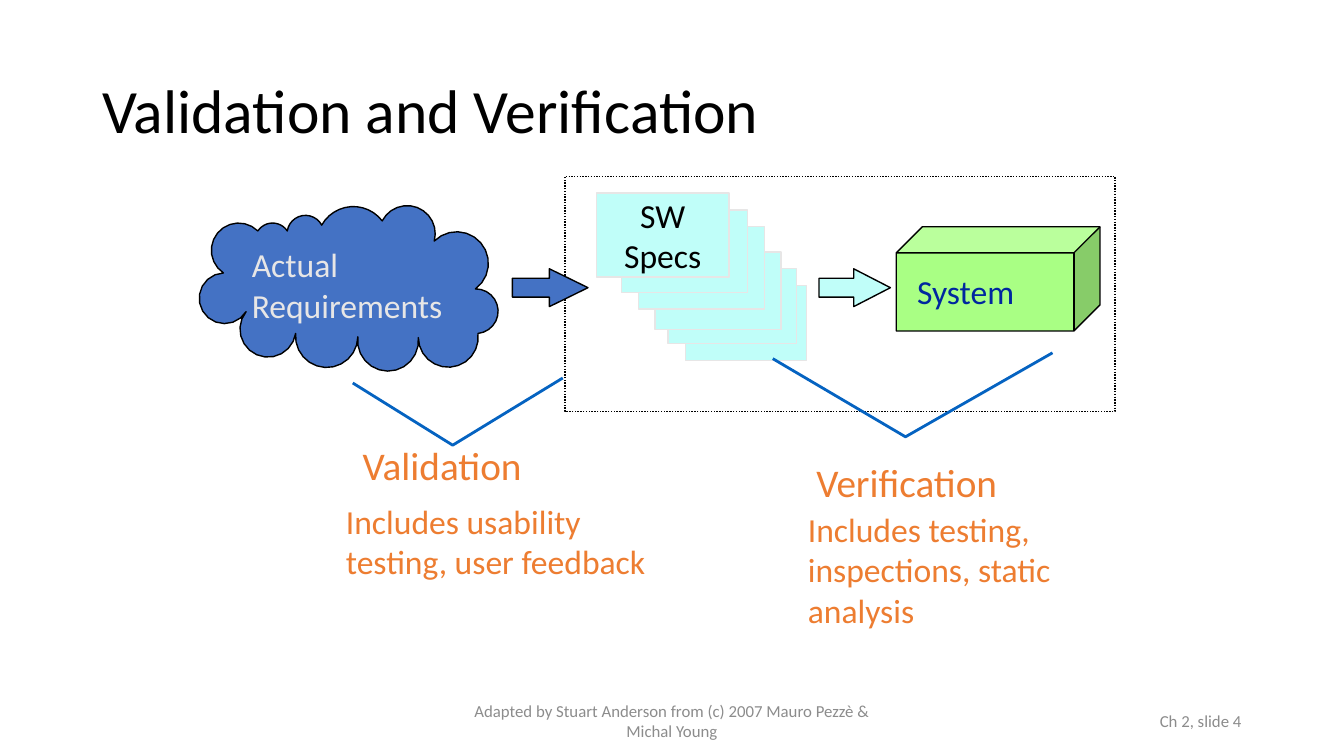
import math
from dataclasses import dataclass
from typing import Optional

import pptx
import pptx.dml.color
import pptx.enum.dml
import pptx.enum.shapes
import pptx.enum.text
import pptx.util

RGB = pptx.dml.color.RGBColor
PRESET = pptx.enum.shapes.MSO_SHAPE
ALIGN = pptx.enum.text.PP_ALIGN
ANCHOR = pptx.enum.text.MSO_ANCHOR

BLACK = RGB(0x00, 0x00, 0x00)
GREY = RGB(0x8C, 0x8C, 0x8C)
PALE = RGB(0xE7, 0xE6, 0xE6)
BLUE = RGB(0x44, 0x72, 0xC4)
NAVY = RGB(0x00, 0x27, 0x9F)
BRACKET_BLUE = RGB(0x05, 0x63, 0xC1)
CYAN = RGB(0xC0, 0xFE, 0xF9)
GREEN = RGB(0xA9, 0xFF, 0x84)
ORANGE = RGB(0xED, 0x7D, 0x31)

FONT = "Calibri"
COLUMNS, ROWS = 160, 90
SLIDE_WIDTH = pptx.util.Emu(12192000)
UNIT = SLIDE_WIDTH // COLUMNS  # columns and rows are equally large
LOBE_STEPS = 12


@dataclass(frozen=True)
class Cell:
    """An area of the grid, in columns and rows."""
    column: float
    row: float
    columns: float
    rows: float

    def emu(self) -> list[int]:
        return [grid(n) for n in (self.column, self.row, self.columns, self.rows)]


@dataclass(frozen=True)
class Label:
    cell: Cell
    lines: tuple[str, ...]
    size: float
    color: RGB
    align: ALIGN = ALIGN.LEFT
    anchor: ANCHOR = ANCHOR.TOP
    wrap: bool = False
    spacing: float = 1.0


@dataclass(frozen=True)
class Block:
    cell: Cell
    preset: PRESET
    fill: Optional[RGB]
    line: RGB = BLACK
    adjustments: tuple[float, ...] = ()
    dotted: bool = False


@dataclass(frozen=True)
class Lobe:
    """An arc of the cloud: where it starts, and its height as a share of its chord."""
    column: float
    row: float
    bulge: float


@dataclass(frozen=True)
class Outline:
    points: list[tuple[float, float]]
    line: RGB
    weight: float
    fill: Optional[RGB] = None


CLOUD_LOBES = (
    Lobe(30.7, 27.5, 0.55), Lobe(26.6, 32.5, 0.83), Lobe(29.3, 37.1, 0.65),
    Lobe(35.2, 39.7, 0.52), Lobe(42.6, 40.1, 0.56), Lobe(49.8, 40.2, 0.53),
    Lobe(56.9, 39.7, 0.48), Lobe(56.6, 34.4, 0.54), Lobe(51.7, 28.7, 0.45),
    Lobe(45.5, 26.3, 0.27), Lobe(38.3, 26.8, 0.36), Lobe(34.2, 27.5, 0.27),
)

HEADING = Label(Cell(11, 4.8, 138, 17.4), ("Validation and Verification",), 44, BLACK,
                anchor=ANCHOR.MIDDLE, wrap=True, spacing=0.9)
CREDIT = Label(Cell(53, 83.4, 54, 4.8),
               ("Adapted by Stuart Anderson from (c) 2007 Mauro Pezzè & Michal Young",),
               12, GREY, ALIGN.CENTER, ANCHOR.MIDDLE, wrap=True)
SLIDE_NUMBER = Label(Cell(113, 83.4, 36, 4.8), ("Ch 2, slide 4",), 12, GREY,
                     ALIGN.RIGHT, ANCHOR.MIDDLE, wrap=True)

VERIFIED_FRAME = Block(Cell(67.25, 21, 65.5, 28), PRESET.RECTANGLE, None, dotted=True)
REQUIREMENTS = Label(Cell(28.8, 28.5, 27.6, 10.9), ("Actual", "Requirements"), 24, PALE)
TO_SPECS = Block(Cell(61, 32, 9, 4.5), PRESET.RIGHT_ARROW, BLUE, adjustments=(0.5, 1.02))
TO_SYSTEM = Block(Cell(97.5, 32, 8.5, 4.5), PRESET.RIGHT_ARROW, CYAN,
                  adjustments=(0.5, 0.97))
SYSTEM_CUBE = Block(Cell(106.7, 27, 24.25, 12.4), PRESET.CUBE, GREEN,
                    adjustments=(0.25,))
FRONT_SPEC = Cell(71, 23, 15.8, 10)
SPEC_SHEETS = (
    Cell(81.6, 34, 14.4, 8.9), Cell(79.5, 32, 15.3, 8.9), Cell(78, 30, 15, 9.2),
    Cell(76, 27, 15, 9.8), Cell(74, 25, 15, 9.8), FRONT_SPEC,
)
SPECS = Label(FRONT_SPEC, ("SW", "Specs"), 24, BLACK, ALIGN.CENTER, ANCHOR.MIDDLE)
SYSTEM = Label(Cell(108, 31.7, 15.8, 6), ("System",), 24, NAVY)

VALIDATION_BRACKET = Outline([(42, 45.6), (53.9, 53), (67, 45)], BRACKET_BLUE, 2)
VERIFICATION_BRACKET = Outline([(92, 42.7), (107.8, 52), (125.3, 42)], BRACKET_BLUE, 2)
ACTIVITIES = (
    Label(Cell(42, 52, 22.9, 6.7), ("Validation",), 28, ORANGE),
    Label(Cell(96, 54, 25.4, 6.7), ("Verification",), 28, ORANGE),
    Label(Cell(40, 59, 39.6, 15.7), ("Includes usability testing, user feedback",),
          24, ORANGE, wrap=True),
    Label(Cell(95, 60, 39.6, 15.7), ("Includes testing, inspections, static analysis",),
          24, ORANGE, wrap=True),
)


def grid(units: float) -> int:
    return round(units * UNIT)


def lobe_points(lobe: Lobe, following: Lobe) -> list[tuple[float, float]]:
    """Points on the arc that swells outwards between the starts of two lobes."""
    dx, dy = following.column - lobe.column, following.row - lobe.row
    half_angle = 2 * math.atan(2 * lobe.bulge)
    radius = 0.5 / math.sin(half_angle)  # as a share of the chord
    points = []
    for step in range(LOBE_STEPS):
        angle = half_angle * (2 * step / LOBE_STEPS - 1)
        along = 0.5 + radius * math.sin(angle)
        out = radius * (math.cos(angle) - math.cos(half_angle))
        points.append((lobe.column + along * dx - out * dy,
                       lobe.row + along * dy + out * dx))
    return points


def requirements_cloud() -> Outline:
    following = CLOUD_LOBES[1:] + CLOUD_LOBES[:1]
    points = [point for pair in zip(CLOUD_LOBES, following) for point in lobe_points(*pair)]
    return Outline(points, BLACK, 1, BLUE)


def style(shape, fill: Optional[RGB], line: RGB, weight: float) -> None:
    shape.shadow.inherit = False
    if fill is None:
        shape.fill.background()
    else:
        shape.fill.solid()
        shape.fill.fore_color.rgb = fill
    shape.line.color.rgb = line
    shape.line.width = pptx.util.Pt(weight)


def draw_label(slide, label: Label) -> None:
    frame = slide.shapes.add_textbox(*label.cell.emu()).text_frame
    frame.word_wrap = label.wrap
    frame.vertical_anchor = label.anchor
    for index, line in enumerate(label.lines):
        paragraph = frame.add_paragraph() if index else frame.paragraphs[0]
        paragraph.alignment = label.align
        paragraph.line_spacing = label.spacing
        run = paragraph.add_run()
        run.text = line
        run.font.name = FONT
        run.font.size = pptx.util.Pt(label.size)
        run.font.color.rgb = label.color


def draw_block(slide, block: Block) -> None:
    shape = slide.shapes.add_shape(block.preset, *block.cell.emu())
    style(shape, block.fill, block.line, 1)
    for index, value in enumerate(block.adjustments):
        shape.adjustments[index] = value
    if block.dotted:
        shape.line.dash_style = pptx.enum.dml.MSO_LINE.ROUND_DOT


def draw_outline(slide, outline: Outline) -> None:
    start, *rest = [(grid(x), grid(y)) for x, y in outline.points]
    builder = slide.shapes.build_freeform(*start)
    builder.add_line_segments(rest, close=outline.fill is not None)
    style(builder.convert_to_shape(), outline.fill, outline.line, outline.weight)


def main() -> None:
    deck = pptx.Presentation()
    deck.slide_width, deck.slide_height = SLIDE_WIDTH, grid(ROWS)
    slide = deck.slides.add_slide(deck.slide_layouts[6])
    sheets = [Block(cell, PRESET.RECTANGLE, CYAN, PALE) for cell in SPEC_SHEETS]
    painters = {Label: draw_label, Block: draw_block, Outline: draw_outline}
    for part in (HEADING, CREDIT, SLIDE_NUMBER, VERIFIED_FRAME, requirements_cloud(),
                 REQUIREMENTS, TO_SPECS, TO_SYSTEM, SYSTEM_CUBE, *sheets, SPECS, SYSTEM,
                 VALIDATION_BRACKET, VERIFICATION_BRACKET, *ACTIVITIES):
        painters[type(part)](slide, part)
    deck.save("out.pptx")


if __name__ == "__main__":
    main()
